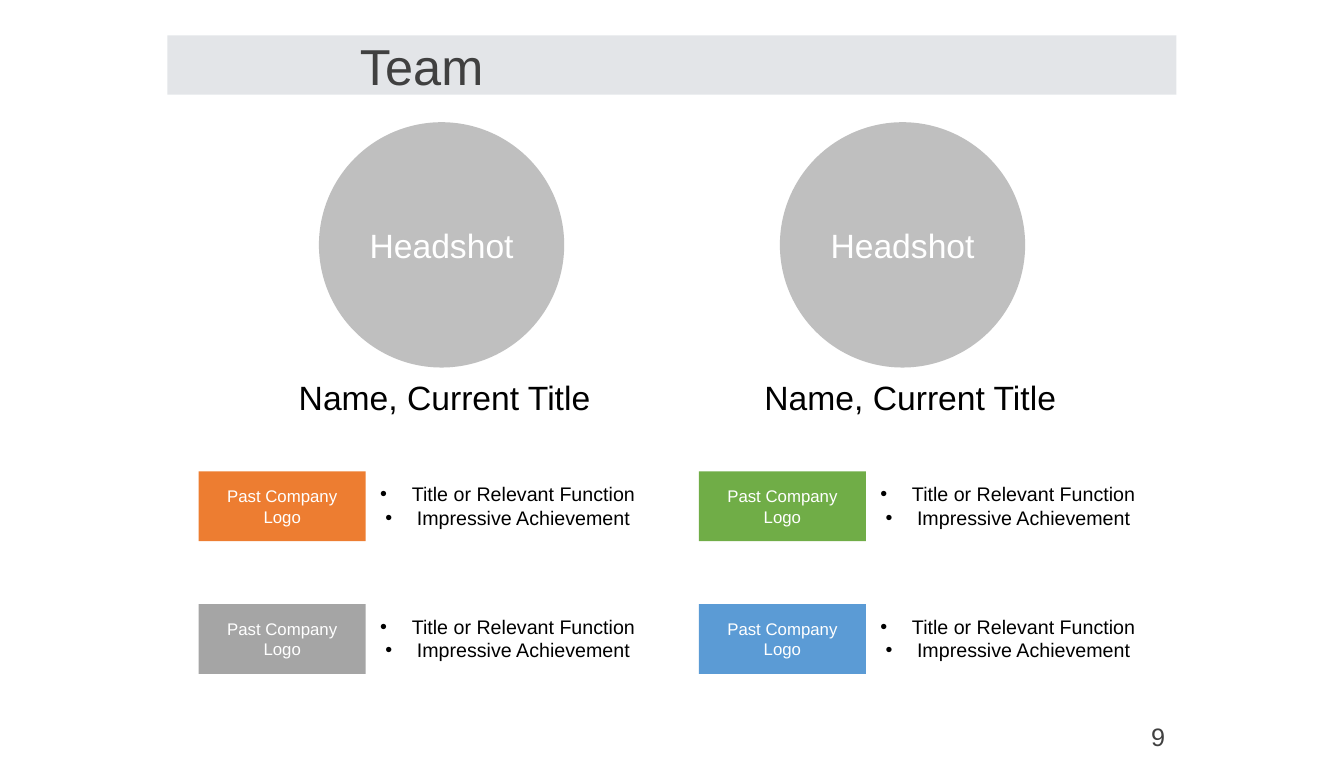
import pptx
import pptx.util
import pptx.dml.color
import pptx.enum.shapes
import pptx.enum.text
import pptx.oxml
import pptx.oxml.ns
import lxml.etree

Pt = pptx.util.Pt
RGB = pptx.dml.color.RGBColor
Shape = pptx.enum.shapes.MSO_SHAPE
Align = pptx.enum.text.PP_ALIGN
Anchor = pptx.enum.text.MSO_ANCHOR
qn = pptx.oxml.ns.qn

NAVY = RGB(0x44, 0x54, 0x6A)
DARK = RGB(0x40, 0x40, 0x40)
SILVER = RGB(0xBF, 0xBF, 0xBF)
ORANGE = RGB(0xED, 0x7D, 0x31)
GRAY = RGB(0xA5, 0xA5, 0xA5)
GREEN = RGB(0x70, 0xAD, 0x47)
BLUE = RGB(0x5B, 0x9B, 0xD5)
WHITE = RGB(0xFF, 0xFF, 0xFF)
BLACK = RGB(0, 0, 0)


class Deck:
    font = "Arial"

    def __init__(self, wide, high):
        self.show = pptx.Presentation()
        self.show.slide_width = Pt(wide)
        self.show.slide_height = Pt(high)
        self.slide = self.show.slides.add_slide(self.show.slide_layouts[6])

    def letter(self, shape, lines, size, color, align):
        frame = shape.text_frame
        frame.text = "\n".join(lines)
        for para in frame.paragraphs:
            para.alignment = align
            para.font.name = self.font
            para.font.size = Pt(size)
            para.font.color.rgb = color
        return frame

    def block(self, kind, box, fill, label=None, size=12, alpha=None):
        shape = self.slide.shapes.add_shape(kind, *map(Pt, box))
        shape.shadow.inherit = False
        shape.fill.solid()
        shape.fill.fore_color.rgb = fill
        shape.line.fill.background()
        if alpha:
            color = shape.element.spPr.find(".//" + qn("a:srgbClr"))
            lxml.etree.SubElement(color, qn("a:alpha"), val=str(alpha * 1000))
        if label:
            frame = self.letter(shape, [label], size, WHITE, Align.CENTER)
            frame.word_wrap = True
            frame.vertical_anchor = Anchor.MIDDLE

    def text(self, box, lines, size, color=BLACK, align=Align.CENTER,
             anchor=Anchor.TOP, wrap=True):
        shape = self.slide.shapes.add_textbox(*map(Pt, box))
        frame = self.letter(shape, lines, size, color, align)
        frame.word_wrap = wrap
        frame.vertical_anchor = anchor
        return frame

    def bullets(self, box, lines, size):
        frame = self.text(box, lines, size, wrap=False)
        for para in frame.paragraphs:
            props = para._p.get_or_add_pPr()
            props.set("marL", str(Pt(22.5)))
            props.set("indent", str(-Pt(22.5)))
            face = pptx.oxml.xmlchemy.OxmlElement("a:buFont")
            face.set("typeface", self.font)
            mark = pptx.oxml.xmlchemy.OxmlElement("a:buChar")
            mark.set("char", "•")
            props.insert(0, face)
            props.insert(1, mark)


def main():
    deck = Deck(959, 540)
    deck.block(Shape.RECTANGLE, (119.5, 25.2, 720, 42.3), NAVY, alpha=15)
    deck.text((249.8, 25.2, 482.4, 42.3), ["Team"], 36, DARK,
              Align.LEFT, Anchor.MIDDLE)

    team = [
        (227.6, 179.3, 141.8, (ORANGE, GRAY)),
        (556.5, 511.6, 498.7, (GREEN, BLUE)),
    ]
    for head, name, job, fills in team:
        deck.block(Shape.OVAL, (head, 87.2, 175, 175), SILVER, "Headshot", 24)
        deck.text((name, 265, 275.8, 36.3), ["Name, Current Title"], 24)
        for row, fill in enumerate(fills):
            top = 336.3 + 94.6 * row
            deck.block(Shape.RECTANGLE, (job, top, 119.2, 49.8), fill,
                       "Past Company Logo")
            deck.bullets((job + 122.2, top + 4, 196.6, 41.2),
                         ["Title or Relevant Function",
                          "Impressive Achievement"], 14)

    deck.text((814.2, 510.8, 24.5, 29), ["9"], 18, DARK, wrap=False)
    deck.show.save("out.pptx")


if __name__ == "__main__":
    main()
